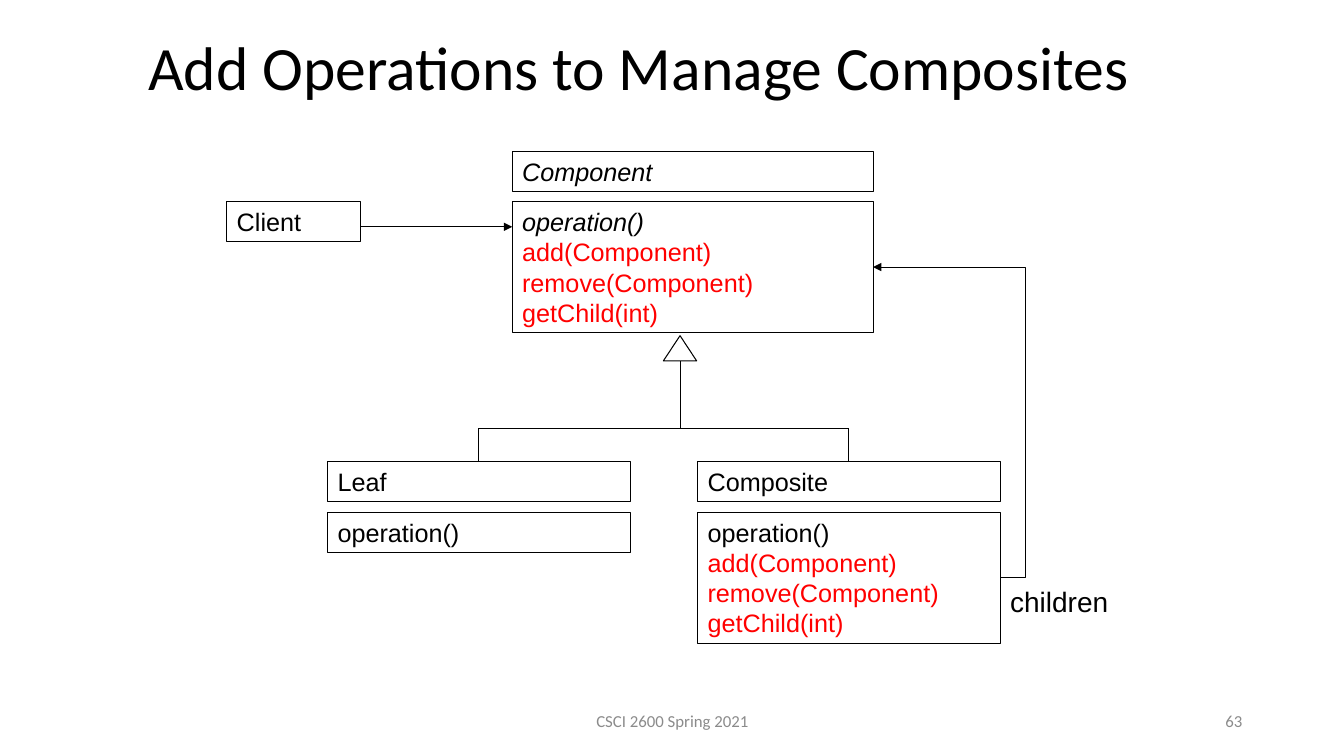
from lxml import etree
from pptx import Presentation
from pptx.dml.color import RGBColor
from pptx.enum.shapes import MSO_CONNECTOR, MSO_SHAPE
from pptx.enum.text import MSO_ANCHOR, MSO_AUTO_SIZE, PP_ALIGN
from pptx.oxml.ns import qn
from pptx.util import Pt

PX = 9144
STRAIGHT, ELBOW = MSO_CONNECTOR.STRAIGHT, MSO_CONNECTOR.ELBOW
RECTANGLE, TRIANGLE = MSO_SHAPE.RECTANGLE, MSO_SHAPE.ISOSCELES_TRIANGLE
TOP, MIDDLE = MSO_ANCHOR.TOP, MSO_ANCHOR.MIDDLE
LEFT, CENTER, RIGHT = PP_ALIGN.LEFT, PP_ALIGN.CENTER, PP_ALIGN.RIGHT
NO_AUTOFIT = MSO_AUTO_SIZE.NONE
TOP_SIDE, RIGHT_SIDE = 0, 3
BLACK, WHITE, RED, GREY = "000000", "FFFFFF", "FF0000", "8B8B8B"

TITLE = "Add Operations to Manage Composites"
MANAGEMENT = ["add(Component)", "remove(Component)", "getChild(int)"]
HEADER_HEIGHT, ROW_HEIGHT, HEADER_STEP = 40, 30, 50

# name: left, top, width, abstract, operations
CLASSES = {
    "Component": (508, 150, 358, True, ["operation()"] + MANAGEMENT),
    "Composite": (692, 458, 300, False, ["operation()"] + MANAGEMENT),
    "Client": (225, 200, 133, False, []),
    "Leaf": (325, 458, 300, False, ["operation()"]),
}
SUBCLASSES = ["Leaf", "Composite"]
BRANCH_Y, TRUNK_X = 425, 675
INHERITANCE_HEAD = (658, 333, 33, 25)
CALL_Y = 225
CHILDREN_BEND = -20000

# text, box, size, font, colour, alignment, anchor, space before
LABELS = [
    ("children", (992, 575, 125, 43), 20, "Arial", BLACK, LEFT, TOP, 10),
    ("CSCI 2600 Spring 2021", (442, 695, 450, 40), 12, "Calibri", GREY, CENTER, MIDDLE, 0),
    ("63", (942, 695, 300, 40), 12, "Calibri", GREY, RIGHT, MIDDLE, 0),
]


def color(value):
    return RGBColor.from_string(value)


def emu(lengths):
    return [length * PX for length in lengths]


def write(shape, lines, size, font, align=LEFT, anchor=TOP, before=0):
    frame = shape.text_frame
    frame.word_wrap = True
    frame.auto_size = NO_AUTOFIT
    frame.vertical_anchor = anchor
    para = frame.paragraphs[0]
    para.alignment = align
    para.space_before = Pt(before)
    for index, (text, ink, italic) in enumerate(lines):
        if index:
            para.add_line_break()
        span = para.add_run()
        span.text = text
        span.font.size = Pt(size)
        span.font.name = font
        span.font.italic = italic
        span.font.color.rgb = color(ink)
    return para


def outline(shape):
    shape.line.color.rgb = color(BLACK)
    shape.line.width = Pt(0.75)


def add_class_box(bounds, lines):
    box = slide.shapes.add_shape(RECTANGLE, *emu(bounds))
    box.shadow.inherit = False
    box.fill.background()
    outline(box)
    write(box, lines, 18, "Arial", before=9)
    return box


def add_line(start, end, kind=STRAIGHT, arrow=False):
    line = slide.shapes.add_connector(kind, *emu(start + end))
    outline(line)
    if arrow:
        tail = etree.SubElement(line.line._get_or_add_ln(), qn("a:tailEnd"))
        tail.set("type", "triangle")
    etree.SubElement(line._element.spPr, qn("a:effectLst"))
    return line


deck = Presentation()
deck.slide_width, deck.slide_height = emu((1333, 750))
slide = deck.slides.add_slide(deck.slide_layouts[5])

title = slide.shapes.title
title.left, title.top, title.width, title.height = emu((137, 8, 996, 125))
write(title, [(TITLE, BLACK, False)], 44, "Calibri", anchor=MIDDLE).line_spacing = 0.9

headers, bodies = {}, {}
for name, (left, top, width, abstract, operations) in CLASSES.items():
    headers[name] = add_class_box((left, top, width, HEADER_HEIGHT), [(name, BLACK, abstract)])
    if operations:
        height = HEADER_HEIGHT + ROW_HEIGHT * (len(operations) - 1)
        lines = [(text, RED if text in MANAGEMENT else BLACK, abstract and text not in MANAGEMENT)
                 for text in operations]
        bodies[name] = add_class_box((left, top + HEADER_STEP, width, height), lines)

branch_ends = []
for name in SUBCLASSES:
    left, top, width = CLASSES[name][:3]
    center = left + width // 2
    branch_ends.append((center, BRANCH_Y))
    add_line((center, BRANCH_Y), (center, top)).end_connect(headers[name], TOP_SIDE)
add_line(*branch_ends)

head_left, head_top, head_width, head_height = INHERITANCE_HEAD
add_line((TRUNK_X, head_top + head_height), (TRUNK_X, BRANCH_Y))
head = slide.shapes.add_shape(TRIANGLE, *emu(INHERITANCE_HEAD))
head.shadow.inherit = False
head.fill.solid()
head.fill.fore_color.rgb = color(WHITE)
outline(head)

client_left, client_top, client_width = CLASSES["Client"][:3]
add_line((client_left + client_width, CALL_Y), (CLASSES["Component"][0], CALL_Y), arrow=True)

children = add_line((992, 573), (866, 265), ELBOW, arrow=True)
children.begin_connect(bodies["Composite"], RIGHT_SIDE)
children.end_connect(bodies["Component"], RIGHT_SIDE)
guides = children._element.spPr.find(qn("a:prstGeom")).get_or_add_avLst()
bend = etree.SubElement(guides, qn("a:gd"))
bend.set("name", "adj1")
bend.set("fmla", f"val {CHILDREN_BEND}")

for text, bounds, size, font, ink, align, anchor, before in LABELS:
    label = slide.shapes.add_textbox(*emu(bounds))
    write(label, [(text, ink, False)], size, font, align, anchor, before)

deck.save("out.pptx")
